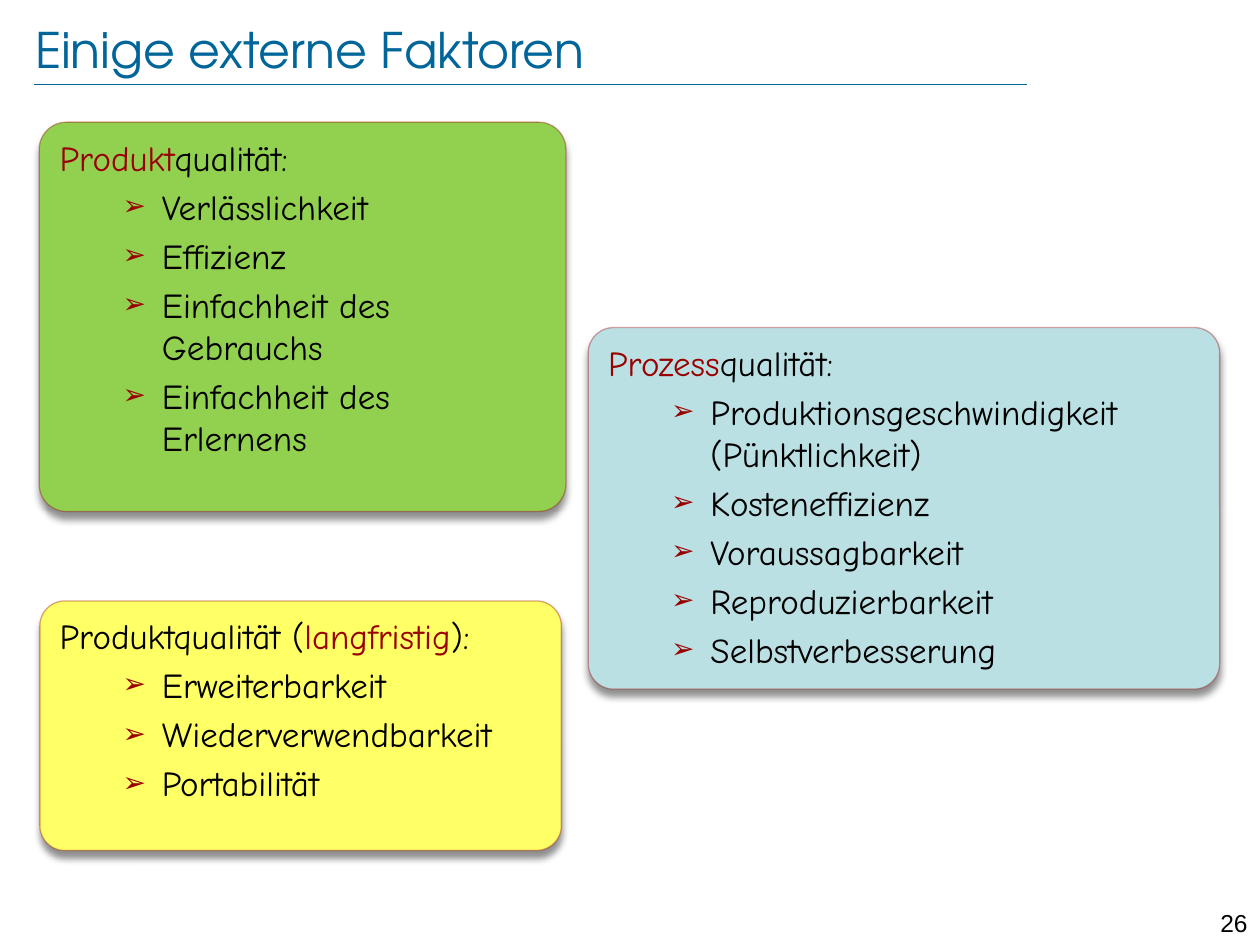
"""Build the slide on external factors of software quality."""
from lxml.etree import SubElement
from pptx import Presentation
from pptx.dml.color import RGBColor
from pptx.enum.shapes import MSO_CONNECTOR, MSO_SHAPE
from pptx.enum.text import MSO_ANCHOR, PP_ALIGN
from pptx.oxml import parse_xml
from pptx.oxml.ns import nsdecls, qn
from pptx.util import Pt

BLUE = RGBColor(0x00, 0x66, 0x99)
RED = RGBColor(0x99, 0x00, 0x00)
BLACK = RGBColor(0x00, 0x00, 0x00)
GREEN = RGBColor(0x92, 0xD0, 0x50)
YELLOW = RGBColor(0xFF, 0xFF, 0x66)
AQUA = RGBColor(0xBB, 0xE0, 0xE3)

SHADOW = f"""<a:effectLst {nsdecls("a")}>
  <a:outerShdw blurRad="50800" dist="50800" dir="5400000" algn="ctr" rotWithShape="0">
    <a:srgbClr val="000000"><a:alpha val="43000"/></a:srgbClr>
  </a:outerShdw>
</a:effectLst>"""
BULLET = (
    f'<a:buClr {nsdecls("a")}><a:srgbClr val="{RED}"/></a:buClr>',
    f'<a:buSzPct {nsdecls("a")} val="80000"/>',
    f'<a:buFont {nsdecls("a")} typeface="Arial"/>',
    f'<a:buChar {nsdecls("a")} char="➢"/>',
)


def write(paragraph, text, *, font="Comic Neue", size=20, color=BLACK):
    run = paragraph.add_run()
    run.text = text
    run.font.name = font
    run.font.size = Pt(size)
    run.font.color.rgb = color


presentation = Presentation()
presentation.slide_width = Pt(720)
presentation.slide_height = Pt(540)
slide = presentation.slides.add_slide(presentation.slide_layouts[6])

rule = slide.shapes.add_connector(MSO_CONNECTOR.STRAIGHT, Pt(19.5), Pt(48), Pt(587), Pt(48))
rule.line.color.rgb = BLUE
rule.line.width = Pt(0.25)
SubElement(rule._element.spPr, qn("a:effectLst"))

page_number = slide.shapes.add_textbox(Pt(680.4), Pt(515.5), Pt(39.6), Pt(17.3)).text_frame
page_number.word_wrap = True
page_number.paragraphs[0].alignment = PP_ALIGN.RIGHT
write(page_number.paragraphs[0], "26", font="Arial", size=14)

title = slide.shapes.add_textbox(Pt(20), Pt(10), Pt(646), Pt(36)).text_frame
title.word_wrap = True
title.vertical_anchor = MSO_ANCHOR.MIDDLE
title.margin_left = title.margin_right = title.margin_top = title.margin_bottom = 0
write(title.paragraphs[0], "Einige externe Faktoren", font="TeX Gyre Adventor", size=28, color=BLUE)

quality_groups = [
    ((336.2, 187.2, 360.8, 206.6), 0.07, AQUA,
     [("Prozess", RED), ("qualität:", BLACK)],
     ["Produktionsgeschwindigkeit (Pünktlichkeit)", "Kosteneffizienz",
      "Voraussagbarkeit", "Reproduzierbarkeit", "Selbstverbesserung"]),
    ((22.8, 343.4, 298, 142.6), 0.1, YELLOW,
     [("Produktqualität (", BLACK), ("langfristig", RED), ("):", BLACK)],
     ["Erweiterbarkeit", "Wiederverwendbarkeit", "Portabilität"]),
    ((22.4, 69.8, 301, 222.5), 0.07, GREEN,
     [("Produkt", RED), ("qualität:", BLACK)],
     ["Verlässlichkeit", "Effizienz", "Einfachheit des Gebrauchs",
      "Einfachheit des Erlernens"]),
]

for bounds, rounding, fill, heading, factors in quality_groups:
    card = slide.shapes.add_shape(MSO_SHAPE.ROUNDED_RECTANGLE, *map(Pt, bounds))
    card.adjustments[0] = rounding
    card.fill.solid()
    card.fill.fore_color.rgb = fill
    card.line.color.rgb = RED
    card.line.width = Pt(0.75)
    outline_color = card.line._ln.find(".//" + qn("a:srgbClr"))
    SubElement(outline_color, qn("a:alpha"), val="34000")
    card._element.spPr.append(parse_xml(SHADOW))

    content = card.text_frame
    content.word_wrap = True
    content.vertical_anchor = MSO_ANCHOR.TOP
    content.margin_right = Pt(14)
    heading_line = content.paragraphs[0]
    heading_line.alignment = PP_ALIGN.LEFT
    for text, color in heading:
        write(heading_line, text, color=color)

    for factor in factors:
        item = content.add_paragraph()
        item.level = 1
        item.alignment = PP_ALIGN.LEFT
        item.space_before = Pt(4)
        properties = item._p.get_or_add_pPr()
        properties.set("marL", str(Pt(58.5)))
        properties.set("indent", str(Pt(-22.5)))
        for element in BULLET:
            properties.append(parse_xml(element))
        write(item, factor)

presentation.save("out.pptx")
